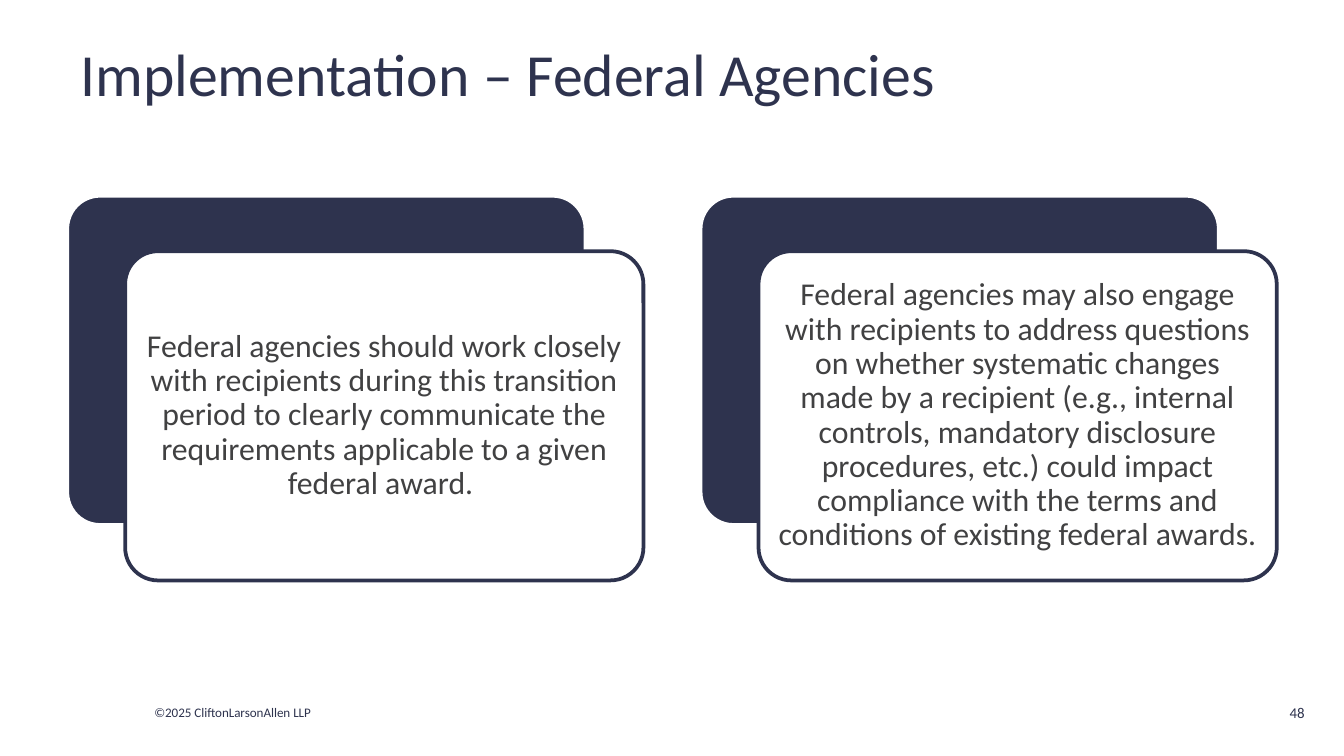
from pptx import Presentation
from pptx.dml.color import RGBColor
from pptx.enum.shapes import MSO_SHAPE as Shape
from pptx.enum.text import MSO_ANCHOR as Anchor, PP_ALIGN as Align
from pptx.util import Emu, Pt

PX = 5715  # 160 px to the inch
FONT = "Calibri"
COLORS = {"navy": "2E334E", "white": "FFFFFF", "body": "414142"}

CARD_TEXTS = [
    "Federal agencies should work closely with recipients during this "
    "transition period to clearly communicate the requirements applicable "
    "to a given federal award. ",
    "Federal agencies may also engage with recipients to address questions "
    "on whether systematic changes made by a recipient (e.g., internal "
    "controls, mandatory disclosure procedures, etc.) could impact "
    "compliance with the terms and conditions of existing federal awards.",
]


def px(*lengths):
    return [Emu(length * PX) for length in lengths]


def color(name):
    return RGBColor.from_string(COLORS[name])


def add_text(slide, box, text, size, ink="navy", align=Align.LEFT,
             inset=(16, 8), line_spacing=None):
    frame = slide.shapes.add_textbox(*px(*box)).text_frame
    frame.word_wrap = True
    frame.vertical_anchor = Anchor.MIDDLE
    frame.margin_left = frame.margin_right = Emu(inset[0] * PX)
    frame.margin_top = frame.margin_bottom = Emu(inset[1] * PX)
    paragraph = frame.paragraphs[0]
    paragraph.alignment = align
    paragraph.line_spacing = line_spacing
    run = paragraph.add_run()
    run.text = text
    run.font.name = FONT
    run.font.size = Pt(size)
    run.font.color.rgb = color(ink)


def add_panel(slide, box, fill, line):
    shape = slide.shapes.add_shape(Shape.ROUNDED_RECTANGLE, *px(*box))
    shape.adjustments[0] = 0.1
    shape.shadow.inherit = False
    shape.fill.solid()
    shape.fill.fore_color.rgb = color(fill)
    shape.line.color.rgb = color(line)
    shape.line.width = Pt(2)


def add_card(slide, box, text):
    """A white panel over a navy one, stepped down and to the right."""
    left, top, width, height = box
    step_x, step_y, padding = 69, 66, 11
    panel_width, panel_height = width - step_x, height - step_y
    front_left, front_top = left + step_x, top + step_y
    add_panel(slide, (left, top, panel_width, panel_height), "navy", "white")
    add_panel(slide, (front_left, front_top, panel_width, panel_height),
              "white", "navy")
    add_text(slide, (front_left + padding, front_top + padding,
                     panel_width - 2 * padding, panel_height - 2 * padding),
             text, 17, "body", Align.CENTER, (11, 11), 0.9)


def add_cards(slide, box, texts):
    left, top, width, height = box
    gap = 68
    card_width = (width - gap * (len(texts) - 1)) // len(texts)
    for index, text in enumerate(texts):
        card_left = left + index * (card_width + gap)
        add_card(slide, (card_left, top, card_width, height), text)


def add_footer(slide, box):
    left, top, width, height = box
    number_width = 69
    add_text(slide, (left, top + 12, 242, 35), "©2025 CliftonLarsonAllen LLP", 7)
    add_text(slide, (left + width - number_width, top, number_width, height),
             "48", 8, align=Align.RIGHT)


def main():
    presentation = Presentation()
    presentation.slide_width, presentation.slide_height = px(1600, 900)
    slide = presentation.slides.add_slide(presentation.slide_layouts[6])

    # Title
    add_text(slide, (80, 26, 1440, 120), "Implementation – Federal Agencies", 32)
    # Cards
    add_cards(slide, (80, 233, 1440, 458), CARD_TEXTS)
    # Copyright line and page number
    add_footer(slide, (168, 818, 1401, 61))

    presentation.save("out.pptx")


if __name__ == "__main__":
    main()
